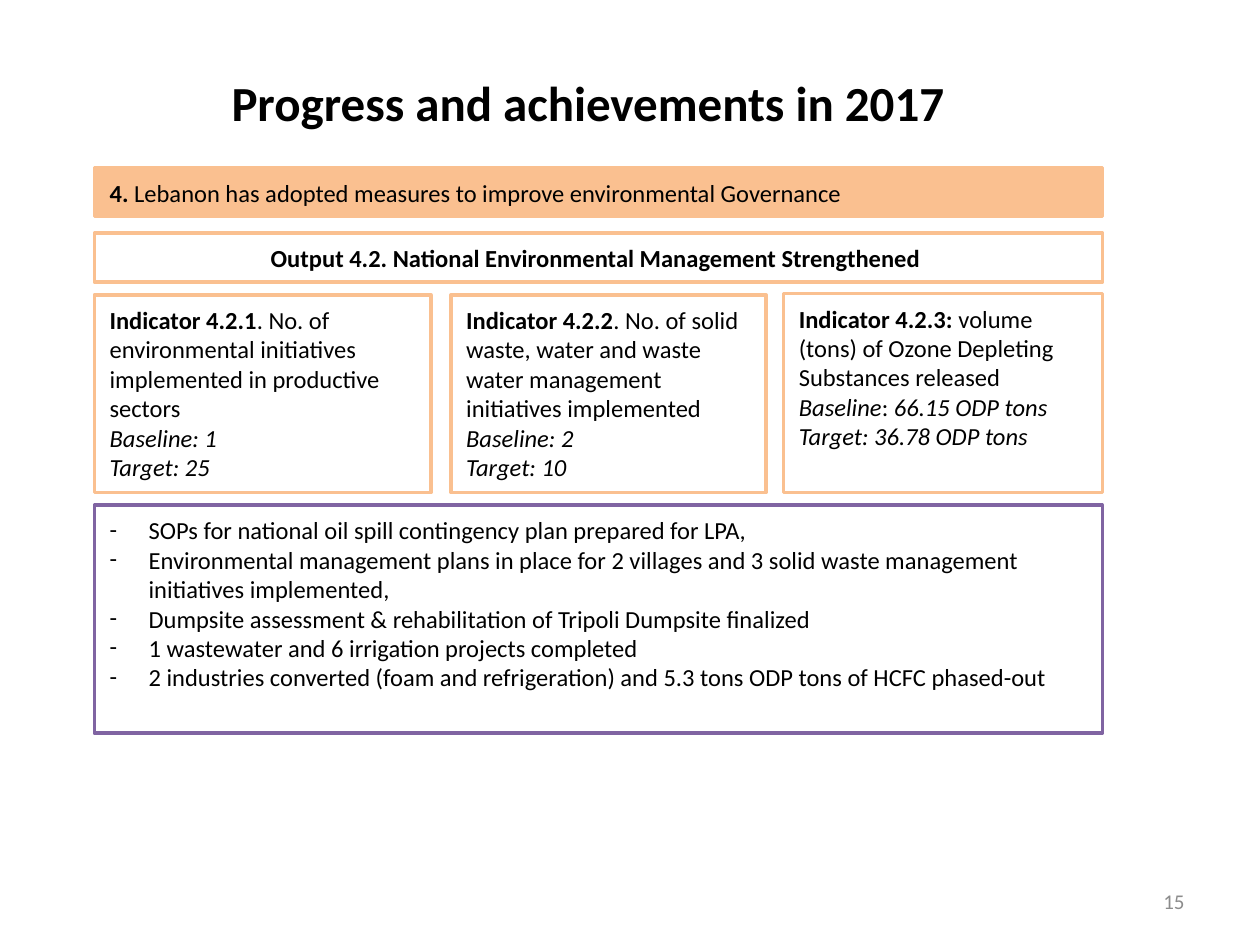
from lxml.etree import SubElement
from pptx import Presentation
from pptx.dml.color import RGBColor
from pptx.enum.shapes import MSO_SHAPE
from pptx.enum.text import MSO_ANCHOR, PP_ALIGN
from pptx.oxml.ns import qn
from pptx.util import Inches, Pt

BLACK = RGBColor(0x00, 0x00, 0x00)
WHITE = RGBColor(0xFF, 0xFF, 0xFF)
GREY = RGBColor(0x8C, 0x8C, 0x8C)
ORANGE = RGBColor(0xFA, 0xC0, 0x90)
PURPLE = RGBColor(0x80, 0x64, 0xA2)

COLS, ROWS = 100, 75
WIDTH, HEIGHT = Inches(10), Inches(7.5)
LEFT, FULL = 7.5, 80
BODY = {"name": "Calibri", "size": Pt(14), "bold": False, "italic": False}
BOLD = {"bold": True}
ITALIC = {"italic": True}
INSETS = {
    "margin_left": Inches(0.12),
    "margin_right": Inches(0.12),
    "margin_top": Inches(0.08),
    "margin_bottom": Inches(0.08),
}

INDICATORS = [
    (LEFT, 23.4, 26.7, [
        [("Indicator 4.2.1", BOLD),
         (". No. of environmental initiatives implemented in productive sectors", {})],
        [("Baseline: 1", ITALIC)],
        [("Target: 25", ITALIC)],
    ]),
    (35.8, 23.4, 25, [
        [("Indicator 4.2.2", BOLD),
         (". No. of solid waste, water and waste water management initiatives implemented", {})],
        [("Baseline: 2", ITALIC)],
        [("Target: 10", ITALIC)],
    ]),
    (62.2, 23.3, 25.3, [
        [("Indicator 4.2.3: ", BOLD),
         ("volume (tons) of Ozone Depleting Substances released", {})],
        [("Baseline", ITALIC), (": ", {}), ("66.15 ODP tons", ITALIC)],
        [("Target: 36.78 ODP tons", ITALIC)],
    ]),
]
INDICATOR_BOTTOM = 39.1

ACHIEVEMENTS = [
    "SOPs for national oil spill contingency plan prepared for LPA,",
    "Environmental management plans in place for 2 villages and 3 solid waste "
    "management initiatives implemented,",
    "Dumpsite assessment & rehabilitation of Tripoli Dumpsite finalized",
    "1 wastewater and 6 irrigation projects completed",
    "2 industries converted (foam and refrigeration) and 5.3 tons ODP tons of "
    "HCFC phased-out",
]


def place(left, top, width, height):
    col, row = WIDTH / COLS, HEIGHT / ROWS
    return [int(n) for n in (left * col, top * row, width * col, height * row)]


def apply(target, values):
    for name, value in values.items():
        setattr(target, name, value)


def add_dash(p):
    pPr = p._p.get_or_add_pPr()
    pPr.set("marL", str(Inches(0.31)))
    pPr.set("indent", str(-Inches(0.31)))
    SubElement(pPr, qn("a:buFont")).set("typeface", "Calibri")
    SubElement(pPr, qn("a:buChar")).set("char", "-")


def write(tf, paragraphs, align=PP_ALIGN.LEFT, color=BLACK, dashed=False):
    tf.word_wrap = True
    for i, runs in enumerate(paragraphs):
        p = tf.add_paragraph() if i else tf.paragraphs[0]
        p.alignment = align
        if dashed:
            add_dash(p)
        for text, style in runs:
            r = p.add_run()
            r.text = text
            apply(r.font, BODY | style)
            r.font.color.rgb = color


def add_label(s, area, text, style, align, color=BLACK, anchor=MSO_ANCHOR.TOP):
    tf = s.shapes.add_textbox(*place(*area)).text_frame
    tf.vertical_anchor = anchor
    write(tf, [[(text, style)]], align, color)


def add_box(s, area, paragraphs, fill=WHITE, line=ORANGE, **options):
    sp = s.shapes.add_shape(MSO_SHAPE.RECTANGLE, *place(*area))
    sp.shadow.inherit = False
    sp.fill.solid()
    sp.fill.fore_color.rgb = fill
    sp.line.color.rgb = line
    sp.line.width = Pt(2)
    tf = sp.text_frame
    apply(tf, INSETS | {"vertical_anchor": MSO_ANCHOR.TOP})
    write(tf, paragraphs, **options)


def main():
    prs = Presentation()
    prs.slide_width, prs.slide_height = WIDTH, HEIGHT
    s = prs.slides.add_slide(prs.slide_layouts[6])

    add_label(s, (71.7, 69.5, 23.3, 4), "15", {"size": Pt(12)},
              PP_ALIGN.RIGHT, GREY, MSO_ANCHOR.MIDDLE)
    add_label(s, (15.4, 5.3, 62.5, 5.6), "Progress and achievements in 2017",
              BOLD | {"size": Pt(28)}, PP_ALIGN.CENTER)
    add_box(s, (LEFT, 13.3, FULL, 3.9), [[
        ("4.", BOLD),
        (" Lebanon has adopted measures to improve environmental Governance", {}),
    ]], fill=ORANGE)
    add_box(s, (LEFT, 18.5, FULL, 3.9), [[
        ("Output 4.2. National Environmental Management Strengthened ", BOLD),
    ]], align=PP_ALIGN.CENTER)
    for left, top, width, paragraphs in INDICATORS:
        add_box(s, (left, top, width, INDICATOR_BOTTOM - top), paragraphs)
    add_box(s, (LEFT, 40.1, FULL, 18.1), [[(text, {})] for text in ACHIEVEMENTS],
            line=PURPLE, dashed=True)

    prs.save("out.pptx")


if __name__ == "__main__":
    main()
